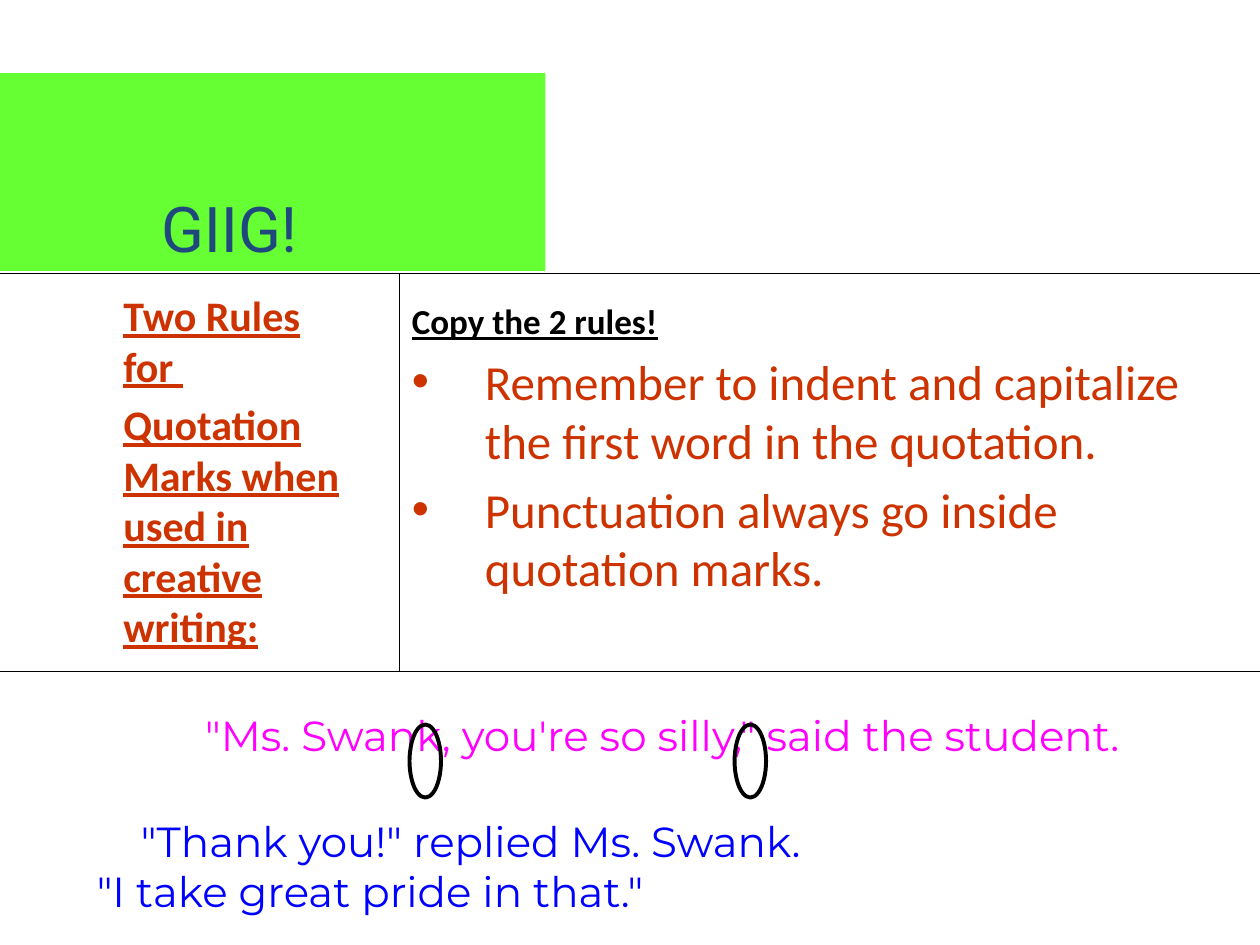
from lxml import etree
from pptx import Presentation
from pptx.dml.color import RGBColor
from pptx.enum import shapes, text
from pptx.oxml import ns
from pptx.util import Inches, Pt

COLORS = {
    "green": "66FF33",
    "navy": "1F497D",
    "rust": "CC3300",
    "black": "000000",
    "magenta": "FF00FF",
    "blue": "0000FF",
}


def add_text(left, top, width, height, lines, wrap=True):
    box = slide.shapes.add_textbox(*map(Inches, (left, top, width, height)))
    frame = box.text_frame
    frame.text = "\n".join(lines)
    frame.word_wrap = wrap
    return frame.paragraphs


def style(paragraph, font, size, color, strong=False, margin=0, indent=0, bullet=False):
    props = paragraph._p.get_or_add_pPr()
    props.set("marL", str(Inches(margin)))
    props.set("indent", str(Inches(indent)))
    if bullet:
        etree.SubElement(props, ns.qn("a:buFont"), typeface="Arial")
        etree.SubElement(props, ns.qn("a:buChar"), char="•")
    for run in paragraph.runs:
        run.font.name = font
        run.font.size = Pt(size)
        run.font.bold = strong
        run.font.underline = strong
        run.font.color.rgb = RGBColor.from_string(COLORS[color])


prs = Presentation()
prs.slide_width = Inches(10)
prs.slide_height = Inches(7.5)
slide = prs.slides.add_slide(prs.slide_layouts[6])

topic = add_text(0.5, 2.25, 2.42, 4.03, [
    "Two Rules for ",
    "Quotation Marks when used in creative writing:",
])
for paragraph in topic:
    style(paragraph, "Calibri", 24, "rust", strong=True, margin=0.38)
topic[1].space_before = Pt(4.8)

heading, *rules = add_text(3.17, 2.33, 6.58, 3.37, [
    "Copy the 2 rules!",
    "Remember to indent and capitalize the first word in the quotation.",
    "Punctuation always go inside quotation marks.",
])
style(heading, "Calibri", 20, "black", strong=True, margin=0.58, indent=-0.58)
for rule in rules:
    rule.space_before = Pt(5.6)
    style(rule, "Calibri", 28, "rust", margin=0.58, indent=-0.58, bullet=True)

banner = slide.shapes.add_shape(
    shapes.MSO_SHAPE.RECTANGLE, Inches(0), Inches(0.58), Inches(4.33), Inches(1.57))
banner.shadow.inherit = False
banner.fill.solid()
banner.fill.fore_color.rgb = RGBColor.from_string(COLORS["green"])
banner.line.fill.background()
banner.text_frame.text = "GIIG!"
banner.text_frame.vertical_anchor = text.MSO_ANCHOR.BOTTOM
title = banner.text_frame.paragraphs[0]
title.alignment = text.PP_ALIGN.LEFT
style(title, "Roboto", 36, "navy", margin=1.18)

for x1, y1, x2, y2 in [(0, 2.17, 10, 2.17), (3.17, 2.17, 3.17, 5.33), (0, 5.33, 10, 5.33)]:
    divider = slide.shapes.add_connector(
        shapes.MSO_CONNECTOR.STRAIGHT, *map(Inches, (x1, y1, x2, y2)))
    divider.line.color.rgb = RGBColor.from_string(COLORS["black"])
    divider.line.width = Pt(0.75)
    etree.SubElement(divider._element.spPr, ns.qn("a:effectLst"))

student = add_text(1.17, 5.58, 8.17, 0.58,
                   ["\"Ms. Swank, you're so silly,\" said the student."], wrap=False)[0]
student.alignment = text.PP_ALIGN.CENTER
style(student, "Montserrat", 24, "magenta")

reply = add_text(0.67, 6.42, 8.67, 0.75, [
    "\"Thank you!\" replied Ms. Swank.",
    "\"I take great pride in that.\"",
])
for paragraph, indent in zip(reply, (0.35, 0)):
    style(paragraph, "Montserrat", 24, "blue", indent=indent)

for left in (5.83, 3.25):
    comma_ring = slide.shapes.add_shape(
        shapes.MSO_SHAPE.OVAL, Inches(left), Inches(5.75), Inches(0.25), Inches(0.58))
    comma_ring.shadow.inherit = False
    comma_ring.fill.background()
    comma_ring.line.color.rgb = RGBColor.from_string(COLORS["black"])
    comma_ring.line.width = Pt(2.25)

prs.save("out.pptx")
